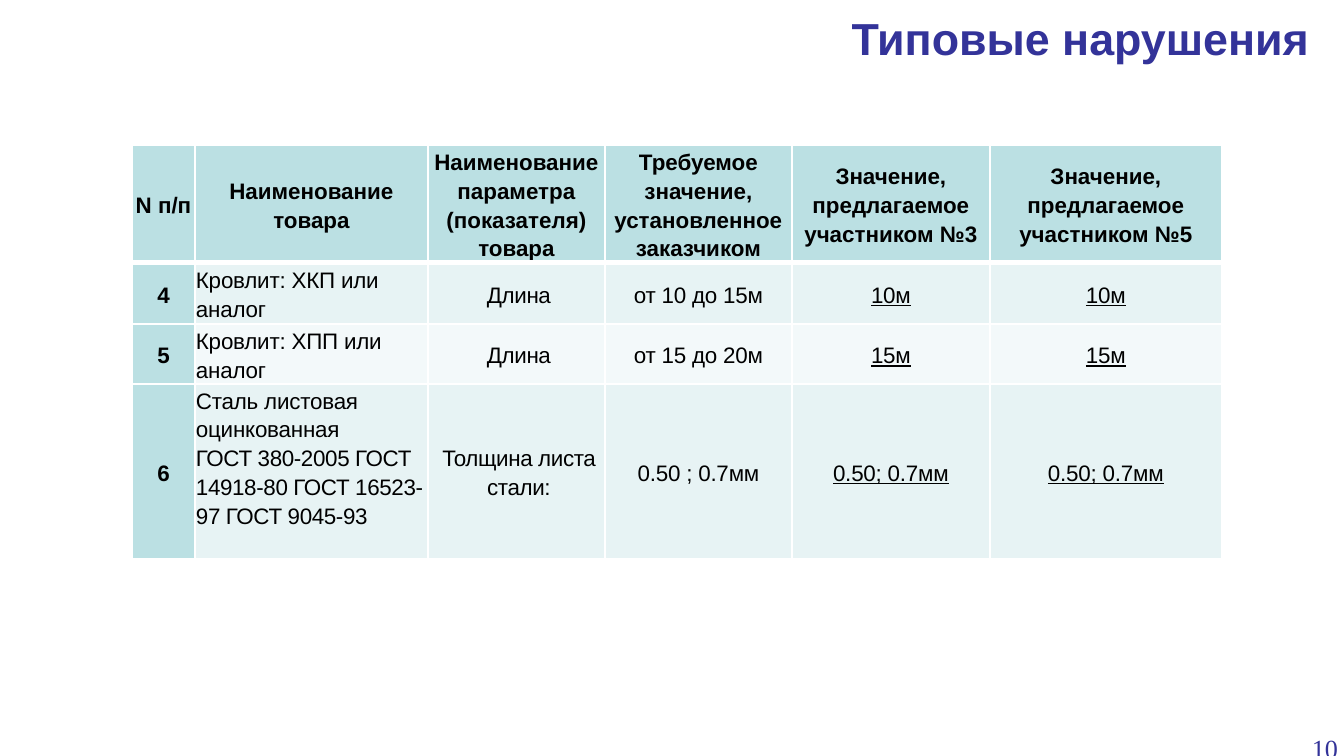
from lxml import etree
from pptx import Presentation
from pptx.dml.color import RGBColor
from pptx.enum.shapes import MSO_SHAPE
from pptx.enum.text import MSO_ANCHOR, MSO_AUTO_SIZE, PP_ALIGN
from pptx.oxml.ns import qn
from pptx.util import Emu, Pt

LEFT, CENTER, RIGHT = PP_ALIGN.LEFT, PP_ALIGN.CENTER, PP_ALIGN.RIGHT
TOP, MIDDLE, BOTTOM = MSO_ANCHOR.TOP, MSO_ANCHOR.MIDDLE, MSO_ANCHOR.BOTTOM
NO_AUTOFIT = MSO_AUTO_SIZE.NONE
RECTANGLE = MSO_SHAPE.RECTANGLE

NAVY = RGBColor(0x33, 0x33, 0x99)
BLACK = RGBColor(0x00, 0x00, 0x00)
WHITE = RGBColor(0xFF, 0xFF, 0xFF)
TEAL = RGBColor(0xBB, 0xE0, 0xE3)
BANDS = (RGBColor(0xE7, 0xF3, 0xF4), RGBColor(0xF3, 0xF9, 0xFA))

EMU_PER_PX = 914400 / 134.4
COLUMN_WIDTHS = (63, 233, 177, 187, 198, 232)
ROW_HEIGHTS = (118, 61, 60, 175)
CELL_INSET = 1

HEADINGS = (
    "N п/п",
    "Наименование товара",
    "Наименование параметра (показателя) товара",
    "Требуемое значение, установленное заказчиком",
    "Значение, предлагаемое участником №3",
    "Значение, предлагаемое участником №5",
)
GOODS = (
    ("4", "Кровлит: ХКП или аналог", "Длина", "от 10 до 15м", "10м", "10м"),
    ("5", "Кровлит: ХПП или аналог", "Длина", "от 15 до 20м", "15м", "15м"),
    ("6", "Сталь листовая оцинкованная\n"
          "ГОСТ 380-2005 ГОСТ 14918-80 ГОСТ 16523-97 ГОСТ 9045-93",
     "Толщина листа стали:", "0.50 ; 0.7мм", "0.50; 0.7мм", "0.50; 0.7мм"),
)
COLUMN_FORMATS = (
    dict(bold=True),
    dict(align=LEFT, tracking=(-10, -20)),
    dict(tracking=(-20,), indent=5),
    dict(tracking=(-10,)),
    dict(underline=True, tracking=(-10,)),
    dict(underline=True, tracking=(-10,)),
)
STEEL_BOTTOM_INSET = 30


def px(length):
    return Emu(round(length * EMU_PER_PX))


def write(frame, text, size=12, font="Arial", color=BLACK, bold=False,
          underline=False, align=CENTER, line_spacing=1, tracking=(0,), indent=0):
    frame.word_wrap = True
    for index, line in enumerate(text.split("\n")):
        paragraph = frame.paragraphs[0] if index == 0 else frame.add_paragraph()
        paragraph.alignment = align
        paragraph.line_spacing = line_spacing
        paragraph.space_before = Pt(0)
        if indent:
            paragraph._p.get_or_add_pPr().set("marL", str(px(indent)))
        run = paragraph.add_run()
        run.text = line
        run.font.size = Pt(size)
        run.font.name = font
        run.font.color.rgb = color
        run.font.bold = bold
        run.font.underline = underline
        run._r.get_or_add_rPr().set("spc", str(tracking[index % len(tracking)]))


def set_insets(target, left, top, right, bottom):
    target.margin_left, target.margin_top = px(left), px(top)
    target.margin_right, target.margin_bottom = px(right), px(bottom)


def set_borders(cell, bottom_width):
    properties = cell._tc.get_or_add_tcPr()
    for side, width in (("L", 1), ("R", 1), ("T", 1), ("B", bottom_width)):
        border = etree.SubElement(properties, qn(f"a:ln{side}"), w=str(Pt(width)))
        fill = etree.SubElement(border, qn("a:solidFill"))
        etree.SubElement(fill, qn("a:srgbClr"), val=str(WHITE))


def fill_cell(cell, text, color, border=1, bottom_inset=CELL_INSET, **text_format):
    set_insets(cell, CELL_INSET, CELL_INSET, CELL_INSET, bottom_inset)
    cell.vertical_anchor = MIDDLE
    set_borders(cell, border)
    cell.fill.solid()
    cell.fill.fore_color.rgb = color
    write(cell.text_frame, text, line_spacing=1.15, **text_format)


def place_title(slide, left, top, width, height):
    title = slide.shapes.title
    title.left, title.top = px(left), px(top)
    title.width, title.height = px(width), px(height)
    frame = title.text_frame
    frame.auto_size = NO_AUTOFIT
    frame.vertical_anchor = BOTTOM
    set_insets(frame, 12, 6, 12, 6)
    write(frame, "Типовые нарушения", size=24, color=NAVY, bold=True, align=RIGHT)


def place_violations(slide, left, top):
    table = slide.shapes.add_table(
        len(ROW_HEIGHTS), len(COLUMN_WIDTHS), px(left), px(top),
        px(sum(COLUMN_WIDTHS)), px(sum(ROW_HEIGHTS))).table
    table.horz_banding = False
    for column, width in zip(table.columns, COLUMN_WIDTHS):
        column.width = px(width)
    for row, height in zip(table.rows, ROW_HEIGHTS):
        row.height = px(height)
    for column, heading in enumerate(HEADINGS):
        fill_cell(table.cell(0, column), heading, TEAL, border=3, bold=True)
    for row, values in enumerate(GOODS, start=1):
        for column, (value, text_format) in enumerate(zip(values, COLUMN_FORMATS)):
            color = TEAL if column == 0 else BANDS[(row - 1) % 2]
            inset = STEEL_BOTTOM_INSET if "\n" in value else CELL_INSET
            fill_cell(table.cell(row, column), value, color,
                      bottom_inset=inset, **text_format)


def place_footer_strip(slide, left, top, width, height):
    strip = slide.shapes.add_shape(
        RECTANGLE, px(left), px(top), px(width), px(height))
    strip.shadow.inherit = False
    strip.fill.solid()
    strip.fill.fore_color.rgb = WHITE
    strip.line.fill.background()


def place_page_number(slide, left, top, width, height):
    frame = slide.shapes.add_textbox(
        px(left), px(top), px(width), px(height)).text_frame
    frame.vertical_anchor = TOP
    set_insets(frame, 12, 6, 6, 6)
    write(frame, "10", size=14, font="Times New Roman", color=NAVY, align=RIGHT)


def main():
    deck = Presentation()
    deck.slide_width, deck.slide_height = px(1344), px(756)
    slide = deck.slides.add_slide(deck.slide_layouts[5])
    place_footer_strip(slide, 750, 726, 504, 5)
    place_title(slide, 0, 0, 1321, 70)
    place_violations(slide, 132, 145)
    place_page_number(slide, 1036, 726, 308, 30)
    deck.save("out.pptx")


if __name__ == "__main__":
    main()
